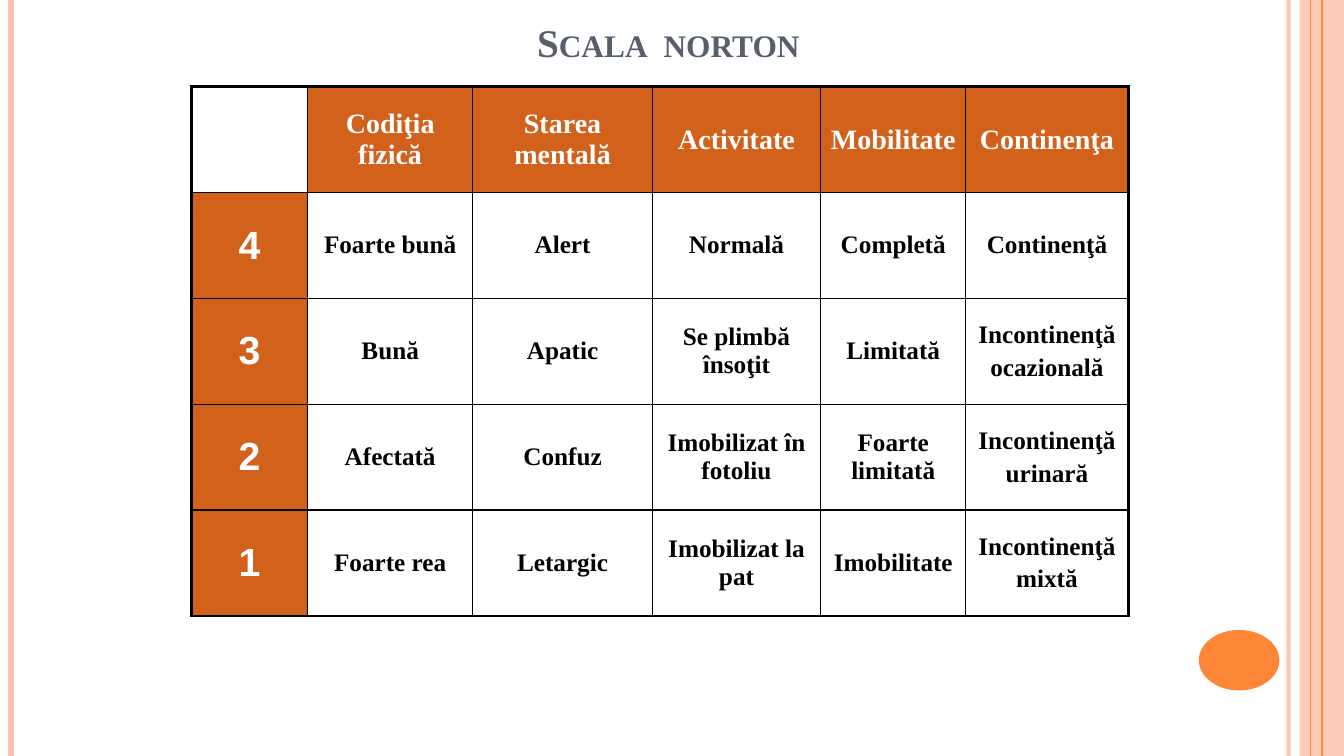
"""Build the Norton scale slide: a bordered score table between decorated side bands."""
from lxml.etree import SubElement
from pptx import Presentation
from pptx.dml.color import RGBColor
from pptx.enum.shapes import MSO_CONNECTOR, MSO_SHAPE
from pptx.enum.text import MSO_ANCHOR, MSO_AUTO_SIZE, PP_ALIGN
from pptx.oxml import parse_xml
from pptx.oxml.ns import nsdecls, qn
from pptx.util import Inches, Pt

PEACH = RGBColor(0xFE, 0xC3, 0xAE)
ORANGE = RGBColor(0xFE, 0x86, 0x37)
RUST = RGBColor(0xD2, 0x61, 0x1C)
SLATE = RGBColor(0x57, 0x5F, 0x6D)
BLACK = RGBColor(0, 0, 0)
WHITE = RGBColor(0xFF, 0xFF, 0xFF)
SERIF = "Times New Roman"
THICK, THIN = Pt(2.25), Pt(1)

COLUMN_WIDTHS = [1.15, 1.64, 1.78, 1.67, 1.44, 1.61]
ROW_HEIGHT = 1.05
SCALE = [
    ["", "Codiţia fizică", "Starea mentală", "Activitate", "Mobilitate", "Continenţa"],
    ["4", "Foarte bună", "Alert", "Normală", "Completă", "Continenţă"],
    ["3", "Bună", "Apatic", "Se plimbă însoţit", "Limitată", "Incontinenţă\nocazională"],
    ["2", "Afectată", "Confuz", "Imobilizat în fotoliu", "Foarte limitată", "Incontinenţă\nurinară"],
    ["1", "Foarte rea", "Letargic", "Imobilizat la pat", "Imobilitate", "Incontinenţă\nmixtă"],
]


def set_opacity(shape, percent):
    color = next(shape._element.spPr.iter(qn("a:srgbClr")))
    SubElement(color, qn("a:alpha")).set("val", str(percent * 1000))


def style_text(paragraph, size, typeface, color):
    paragraph.alignment = PP_ALIGN.CENTER
    paragraph.font.size = Pt(size)
    paragraph.font.name = typeface
    paragraph.font.bold = True
    paragraph.font.color.rgb = color


deck = Presentation()
deck.slide_width, deck.slide_height = Inches(13.33), Inches(7.5)
page = deck.slides.add_slide(deck.slide_layouts[5])

band = page.shapes.add_shape(MSO_SHAPE.RECTANGLE, Inches(12.89), 0, Inches(0.44), deck.slide_height)
disc = page.shapes.add_shape(MSO_SHAPE.OVAL, Inches(11.89), Inches(6.25), Inches(0.8), Inches(0.6))
for shape, color in ((band, PEACH), (disc, ORANGE)):
    shape.shadow.inherit = False
    shape.fill.solid()
    shape.fill.fore_color.rgb = color
    shape.line.fill.background()
set_opacity(band, 87)

for x, color, weight, opacity in (
    (0.11, PEACH, 4.5, 100),
    (12.78, PEACH, 3, 93),
    (13, ORANGE, 0.75, 100),
    (13.11, ORANGE, 1.5, 100),
):
    stripe = page.shapes.add_connector(
        MSO_CONNECTOR.STRAIGHT, Inches(x), 0, Inches(x), deck.slide_height)
    stripe.line.color.rgb = color
    stripe.line.width = Pt(weight)
    SubElement(stripe._element.spPr, qn("a:effectLst"))
    if opacity < 100:
        set_opacity(stripe, opacity)

title = page.shapes.title
title.left, title.top, title.width, title.height = Inches(2.06), 0, Inches(9.14), Inches(0.7)
title.text_frame.auto_size = MSO_AUTO_SIZE.NONE
title.text_frame.vertical_anchor = MSO_ANCHOR.BOTTOM
title.text_frame.text = "Scala  norton"
heading = title.text_frame.paragraphs[0]
style_text(heading, 28, SERIF, SLATE)
heading.runs[0]._r.get_or_add_rPr().set("cap", "small")

last_row, last_column = len(SCALE) - 1, len(COLUMN_WIDTHS) - 1
table = page.shapes.add_table(
    len(SCALE), len(COLUMN_WIDTHS), Inches(1.9), Inches(0.86),
    Inches(sum(COLUMN_WIDTHS)), Inches(ROW_HEIGHT * len(SCALE))).table
table.first_row = table.horz_banding = False
for column, width in zip(table.columns, COLUMN_WIDTHS):
    column.width = Inches(width)

for i, labels in enumerate(SCALE):
    table.rows[i].height = Inches(ROW_HEIGHT)
    for j, label in enumerate(labels):
        cell = table.cell(i, j)
        cell.vertical_anchor = MSO_ANCHOR.MIDDLE
        cell.margin_left = cell.margin_right = Inches(0.08)
        is_header = (i == 0) != (j == 0)
        cell.fill.solid()
        cell.fill.fore_color.rgb = RUST if is_header else WHITE
        outer_sides = {"L": j == 0, "R": j == last_column, "T": i == 0, "B": i == last_row}
        for position, (side, is_outer) in enumerate(outer_sides.items()):
            border = parse_xml(
                f'<a:ln{side} {nsdecls("a")} w="{THICK if is_outer else THIN}">'
                f'<a:solidFill><a:srgbClr val="{BLACK}"/></a:solidFill></a:ln{side}>')
            cell._tc.get_or_add_tcPr().insert(position, border)
        if not label:
            continue
        cell.text_frame.text = label
        for k, para in enumerate(cell.text_frame.paragraphs):
            if k:
                para.space_before = Pt(3.6)
            if i == 0:
                style_text(para, 20, SERIF, WHITE)
            elif j == 0:
                style_text(para, 28, "Arial", WHITE)
            else:
                style_text(para, 18, SERIF, BLACK)

deck.save("out.pptx")
